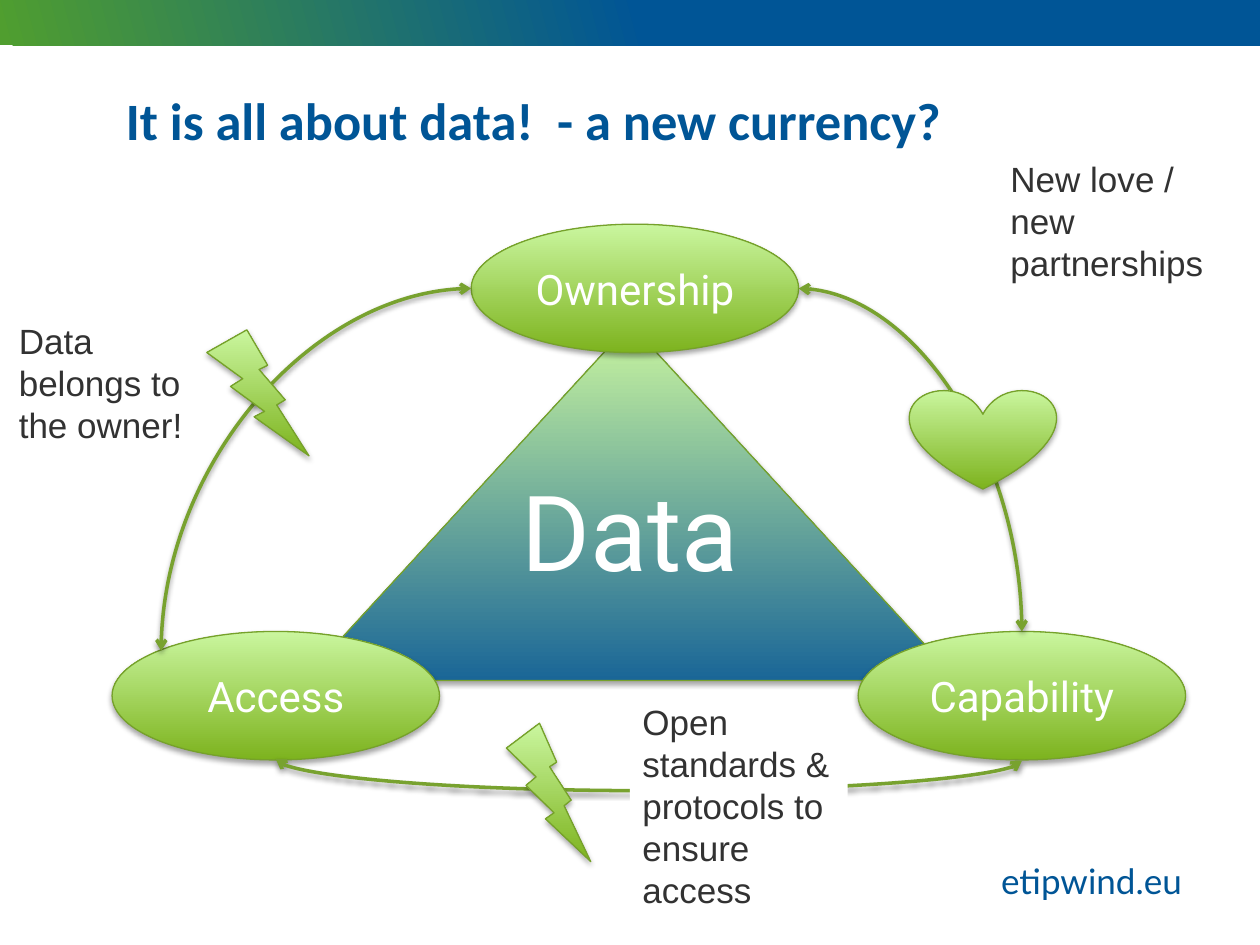
from lxml.etree import SubElement
from pptx import Presentation
from pptx.dml.color import RGBColor
from pptx.enum.shapes import MSO_CONNECTOR as Connector, MSO_SHAPE as Shape
from pptx.enum.text import MSO_ANCHOR as Anchor, PP_ALIGN as Align
from pptx.oxml.ns import qn
from pptx.util import Cm, Pt

BLUE = RGBColor(0x00, 0x55, 0x96)
DEEP_BLUE = RGBColor(0x1A, 0x66, 0x97)
BAR_GREEN = RGBColor(0x50, 0x9E, 0x2F)
GREEN = RGBColor(0x7D, 0xB3, 0x1E)
LIGHT_GREEN = RGBColor(0xCA, 0xF6, 0x9F)
OUTLINE = RGBColor(0x76, 0xA1, 0x2B)
ARROW_GREEN = RGBColor(0x78, 0xA2, 0x2F)
INK = RGBColor(0x32, 0x32, 0x32)
WHITE = RGBColor(0xFF, 0xFF, 0xFF)
BLACK = RGBColor(0x00, 0x00, 0x00)

UPWARD = 90
TOP, TOP_LEFT, LEFT, BOTTOM, RIGHT = 0, 1, 2, 4, 6
NODE_WIDTH, NODE_HEIGHT = 6.6, 2.59


class DataSlide:
    """Draws the elements of the data slide in one shared style."""

    def __init__(self, page):
        self.shapes = page.shapes

    def fill_text(self, box, text, size, font, color, align=Align.LEFT, anchor=Anchor.TOP, bold=False):
        frame = box.text_frame
        frame.word_wrap = True
        frame.vertical_anchor = anchor
        para = frame.paragraphs[0]
        para.alignment = align
        span = para.add_run()
        span.text = text
        span.font.size = Pt(size)
        span.font.name = font
        span.font.bold = bold
        span.font.color.rgb = color

    def text(self, place, text, size, font, color, **layout):
        box = self.shapes.add_textbox(*map(Cm, place))
        self.fill_text(box, text, size, font, color, **layout)
        return box

    def label(self, place, text):
        return self.text(place, text, 20, "Arial", INK)

    def shade(self, effects, opacity, distance):
        shadow = SubElement(effects, qn("a:outerShdw"), blurRad=str(Pt(3.15)),
                            dist=str(Pt(distance)), dir="5400000", rotWithShape="0")
        tint = SubElement(shadow, qn("a:srgbClr"), val=str(BLACK))
        SubElement(tint, qn("a:alpha"), val=str(opacity * 1000))

    def gradient(self, kind, place, start, end, angle=UPWARD, reach=1.0):
        shape = self.shapes.add_shape(kind, *map(Cm, place))
        shape.shadow.inherit = False
        shape.fill.gradient()
        shape.fill.gradient_angle = angle
        stops = shape.fill.gradient_stops
        for stop, color, position in zip(stops, (start, end), (0, reach)):
            stop.color.rgb = color
            stop.position = position
        shape.line.fill.background()
        return shape

    def figure(self, kind, place, start=GREEN):
        shape = self.gradient(kind, place, start, LIGHT_GREEN)
        shape.line.color.rgb = OUTLINE
        shape.line.width = Pt(0.75)
        self.shade(shape._element.spPr.find(qn("a:effectLst")), 35, 1.8)
        return shape

    def node(self, left, top, text):
        shape = self.figure(Shape.OVAL, (left, top, NODE_WIDTH, NODE_HEIGHT))
        self.fill_text(shape, text, 24, "Roboto", WHITE, Align.CENTER, Anchor.MIDDLE)
        return shape

    def curve(self, start, start_site, end, end_site):
        points = [self.site(start, start_site), self.site(end, end_site)]
        curve = self.shapes.add_connector(Connector.CURVE, *points[0], *points[1])
        curve.line.color.rgb = ARROW_GREEN
        curve.line.width = Pt(2)
        element = curve._element
        outline = element.spPr.find(qn("a:ln"))
        for tag in ("a:headEnd", "a:tailEnd"):
            SubElement(outline, qn(tag), type="arrow")
        self.shade(SubElement(element.spPr, qn("a:effectLst")), 38, 1.6)
        links = element.find(".//" + qn("p:cNvCxnSpPr"))
        for tag, shape, site in (("a:stCxn", start, start_site), ("a:endCxn", end, end_site)):
            SubElement(links, qn(tag), id=str(shape.shape_id), idx=str(site))
        return curve

    def corner_curve(self, *ends):
        curve = self.curve(*ends)
        curve._element.spPr.find(qn("a:prstGeom")).set("prst", "curvedConnector2")

    def hanging_curve(self, start, end, depth):
        curve = self.curve(start, BOTTOM, end, BOTTOM)
        span, middle = curve.width, curve.left + curve.width // 2
        level, thickness = curve.top, Cm(0.04)
        curve.left, curve.top = middle - thickness // 2, level - span // 2
        curve.width, curve.height = thickness, span
        frame = curve._element.spPr.find(qn("a:xfrm"))
        frame.set("rot", "16200000")
        frame.set("flipH", "1")
        guides = curve._element.spPr.find(qn("a:prstGeom")).find(qn("a:avLst"))
        ratio = round(Cm(depth) / thickness * 100000)
        SubElement(guides, qn("a:gd"), name="adj1", fmla=f"val {ratio}")

    def site(self, shape, site):
        across, down = {TOP: (0.5, 0), TOP_LEFT: (0.15, 0.15), LEFT: (0, 0.5),
                        BOTTOM: (0.5, 1), RIGHT: (1, 0.5)}[site]
        return round(shape.left + across * shape.width), round(shape.top + down * shape.height)


def main():
    deck = Presentation()
    deck.slide_width, deck.slide_height = Cm(25.4), Cm(19.05)
    slide = DataSlide(deck.slides.add_slide(deck.slide_layouts[6]))

    slide.text((17.7, 17.2, 8.61, 1.12), "etipwind.eu", 20, "Lato", BLUE, align=Align.CENTER)
    slide.gradient(Shape.RECTANGLE, (0, 0, 25.5, 0.91), BAR_GREEN, BLUE, angle=15, reach=0.51)
    triangle = slide.figure(Shape.ISOSCELES_TRIANGLE, (6.1, 6.53, 13.21, 7.19), DEEP_BLUE)
    slide.fill_text(triangle, "Data", 60, "Roboto", WHITE, Align.CENTER, Anchor.MIDDLE)
    triangle.text_frame.margin_bottom = Cm(2.62)
    slide.text((2.29, 1.52, 18.75, 1.8), "It is all about data!  - a new currency?", 30,
               "Calibri", BLUE, anchor=Anchor.MIDDLE, bold=True)

    ownership = slide.node(9.5, 4.52, "Ownership")
    capability = slide.node(17.3, 12.73, "Capability")
    access = slide.node(2.26, 12.73, "Access")
    slide.corner_curve(ownership, LEFT, access, TOP_LEFT)
    slide.corner_curve(ownership, RIGHT, capability, TOP)
    slide.hanging_curve(access, capability, 0.64)

    slide.figure(Shape.LIGHTNING_BOLT, (4.17, 6.65, 2.06, 2.54))
    slide.figure(Shape.LIGHTNING_BOLT, (10.21, 14.58, 1.7, 2.79))
    slide.figure(Shape.HEART, (18.34, 7.85, 2.95, 2.01))

    slide.label((0.13, 6.32, 4.39, 2.82), "Data belongs to the owner!")
    slide.label((20.12, 3.05, 4.39, 2.82), "New love / new partnerships")
    standards = slide.label((12.7, 14, 4.39, 4.52), "Open standards & protocols to ensure access")
    standards.fill.solid()
    standards.fill.fore_color.rgb = WHITE

    deck.save("out.pptx")


if __name__ == "__main__":
    main()
